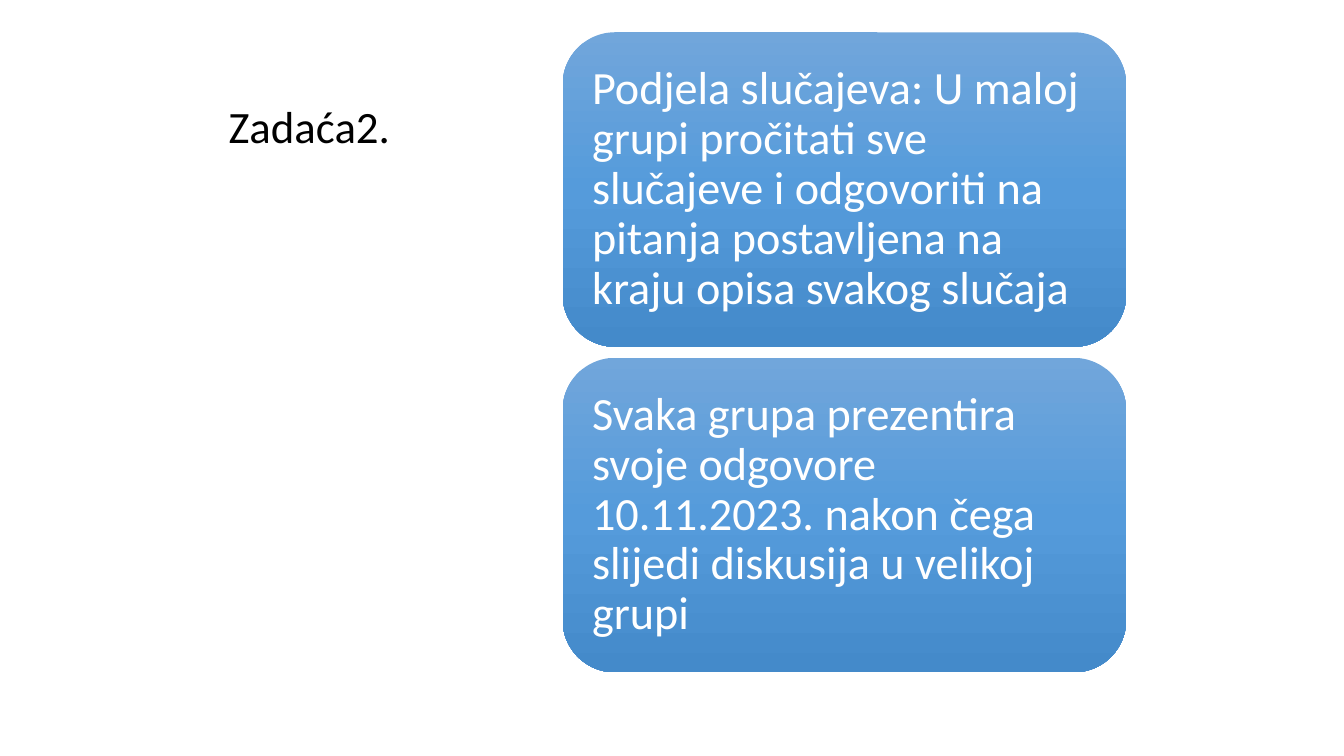
from copy import deepcopy

from pptx import Presentation
from pptx.dml.color import RGBColor
from pptx.enum.shapes import MSO_SHAPE
from pptx.enum.text import MSO_ANCHOR, PP_ALIGN
from pptx.oxml.ns import qn
from pptx.util import Inches, Pt

ROUNDED = MSO_SHAPE.ROUNDED_RECTANGLE
MIDDLE, BOTTOM = MSO_ANCHOR.MIDDLE, MSO_ANCHOR.BOTTOM
LEFT = PP_ALIGN.LEFT


def rgb(value):
    return RGBColor.from_string(value)


def write(sp, text, size, color, anchor, margins):
    tf = sp.text_frame
    tf.word_wrap = True
    tf.vertical_anchor = anchor
    for side, margin in margins.items():
        setattr(tf, "margin_" + side, Inches(margin))
    p = tf.paragraphs[0]
    p.alignment = LEFT
    p.line_spacing = 0.9
    r = p.add_run()
    r.text = text
    r.font.name = "Calibri"
    r.font.size = Pt(size)
    r.font.color.rgb = rgb(color)


prs = Presentation()
prs.slide_width = Inches(13.33)
prs.slide_height = Inches(7.5)
s = prs.slides.add_slide(prs.slide_layouts[6])

title = s.shapes.add_textbox(Inches(2.17), Inches(0.3), Inches(3.29), Inches(1.27))
write(title, "Zadaća2.", 32, "000000", BOTTOM,
      {"left": 0.1, "right": 0.1, "top": 0.05, "bottom": 0.05})

tasks = [
    "Podjela slučajeva: U maloj grupi pročitati sve slučajeve i odgovoriti "
    "na pitanja postavljena na kraju opisa svakog slučaja",
    "Svaka grupa prezentira svoje odgovore 10.11.2023. nakon čega slijedi "
    "diskusija u velikoj grupi",
]
gradient = [(0, "71A6DB"), (0.5, "559BDB"), (1, "448ACA")]
card_margins = dict.fromkeys(("left", "right", "top", "bottom"), 0.14)
card_height, gap = 3.12, 0.11

for i, task in enumerate(tasks):
    top = 0.32 + i * (card_height + gap)
    card = s.shapes.add_shape(ROUNDED, Inches(5.58), Inches(top),
                              Inches(5.59), Inches(card_height))
    card.shadow.inherit = False
    card.line.fill.background()
    card.fill.gradient()
    card.fill.gradient_angle = 270
    stop_list = card._element.spPr.find(qn("a:gradFill")).find(qn("a:gsLst"))
    stop_list.append(deepcopy(stop_list[-1]))
    for stop, (position, color) in zip(card.fill.gradient_stops, gradient):
        stop.position = position
        stop.color.rgb = rgb(color)
    write(card, task, 33, "FFFFFF", MIDDLE, card_margins)

prs.save("out.pptx")
